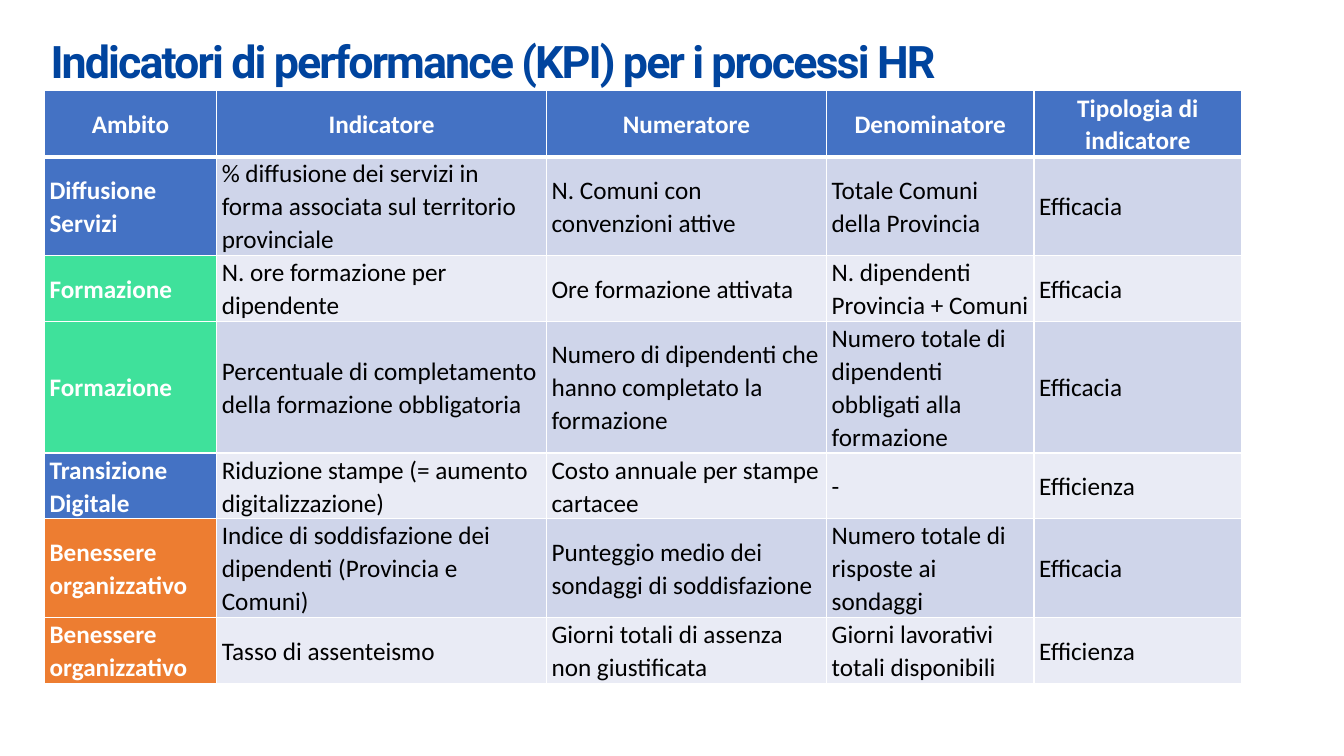
from dataclasses import dataclass
from typing import Any

from lxml.etree import SubElement
from pptx import Presentation
from pptx.dml.color import RGBColor as RGB
from pptx.enum.text import MSO_ANCHOR as Anchor, MSO_AUTO_SIZE as AutoSize, PP_ALIGN as Align
from pptx.oxml.ns import qn
from pptx.util import Cm, Pt

COLORS = {
    "title": "00449E",
    "blue": "4472C4",
    "green": "3FE19B",
    "orange": "ED7D31",
    "band_dark": "CFD5EA",
    "band_light": "E9EBF5",
    "white": "FFFFFF",
    "black": "000000",
}


@dataclass
class Kpi:
    area: str
    color: str
    height: float
    details: tuple[str, str, str, str]


HEADERS = ("Ambito", "Indicatore", "Numeratore", "Denominatore", "Tipologia di indicatore")
HEADER_HEIGHT = 1.4
COL_WIDTHS = (4.34, 8.31, 7.06, 5.23, 5.23)
KPIS = [
    Kpi("Diffusione Servizi", "blue", 2.11,
        ("% diffusione dei servizi in forma associata sul territorio provinciale",
         "N. Comuni con convenzioni attive", "Totale Comuni della Provincia", "Efficacia")),
    Kpi("Formazione", "green", 1.4,
        ("N. ore formazione per dipendente", "Ore formazione attivata",
         "N. dipendenti Provincia + Comuni", "Efficacia")),
    Kpi("Formazione", "green", 2.84,
        ("Percentuale di completamento della formazione obbligatoria",
         "Numero di dipendenti che hanno completato la formazione",
         "Numero totale di dipendenti obbligati alla formazione", "Efficacia")),
    Kpi("Transizione Digitale", "blue", 1.4,
        ("Riduzione stampe (= aumento digitalizzazione)",
         "Costo annuale per stampe cartacee", "-", "Efficienza")),
    Kpi("Benessere organizzativo", "orange", 2.11,
        ("Indice di soddisfazione dei dipendenti (Provincia e Comuni)",
         "Punteggio medio dei sondaggi di soddisfazione",
         "Numero totale di risposte ai sondaggi", "Efficacia")),
    Kpi("Benessere organizzativo", "orange", 1.4,
        ("Tasso di assenteismo", "Giorni totali di assenza non giustificata",
         "Giorni lavorativi totali disponibili", "Efficienza")),
]

TITLE_BOX = {"left": Cm(0.99), "top": Cm(0.51), "width": Cm(31.88), "height": Cm(2.03)}
TITLE_FRAME = {"vertical_anchor": Anchor.MIDDLE, "word_wrap": True, "auto_size": AutoSize.NONE}
TITLE_FONT = {"name": "Roboto", "size": Pt(32), "bold": True}
CELL_FORMAT = {"vertical_anchor": Anchor.MIDDLE, "margin_left": Cm(0.13),
               "margin_right": Cm(0.13), "margin_top": 0, "margin_bottom": 0}
CELL_PARAGRAPH = {"line_spacing": 1.07, "space_after": Pt(6)}
CELL_FONT = {"name": "Calibri", "size": Pt(18)}


def apply(target: Any, values: dict[str, Any]) -> None:
    for name, value in values.items():
        setattr(target, name, value)


def rgb(name: str) -> RGB:
    return RGB.from_string(COLORS[name])


def add_borders(cell: Any, top: float, bottom: float) -> None:
    """Draw white borders; must run before the cell is filled."""
    tc_pr = cell._tc.get_or_add_tcPr()
    for tag, points in {"lnL": 1, "lnR": 1, "lnT": top, "lnB": bottom}.items():
        ln = SubElement(tc_pr, qn(f"a:{tag}"), w=str(Pt(points)))
        SubElement(SubElement(ln, qn("a:solidFill")), qn("a:srgbClr"), val=COLORS["white"])


def fill_cell(cell: Any, text: str, fill: str, color: str, bold: bool, align: Align) -> None:
    cell.fill.solid()
    cell.fill.fore_color.rgb = rgb(fill)
    apply(cell, CELL_FORMAT)
    p = cell.text_frame.paragraphs[0]
    apply(p, CELL_PARAGRAPH | {"alignment": align})
    r = p.add_run()
    r.text = text
    apply(r.font, CELL_FONT | {"bold": bold})
    r.font.color.rgb = rgb(color)


def add_title(s: Any, text: str) -> None:
    sp = s.shapes.title
    apply(sp, TITLE_BOX)
    apply(sp.text_frame, TITLE_FRAME)
    p = sp.text_frame.paragraphs[0]
    p.alignment = Align.LEFT
    p._p.get_or_add_pPr().set("marL", str(Cm(0.03)))
    r = p.add_run()
    r.text = text
    apply(r.font, TITLE_FONT)
    r.font.color.rgb = rgb("title")
    r._r.get_or_add_rPr().set("spc", "-140")


def add_kpi_table(s: Any) -> None:
    heights = [HEADER_HEIGHT] + [kpi.height for kpi in KPIS]
    table = s.shapes.add_table(len(heights), len(COL_WIDTHS), Cm(1.12), Cm(2.29),
                               Cm(sum(COL_WIDTHS)), Cm(sum(heights))).table
    for col, width in zip(table.columns, COL_WIDTHS):
        col.width = Cm(width)
    for i, (row, height) in enumerate(zip(table.rows, heights)):
        row.height = Cm(height)
        for cell in row.cells:
            add_borders(cell, top=3 if i == 1 else 1, bottom=3 if i == 0 else 1)

    for j, text in enumerate(HEADERS):
        fill_cell(table.cell(0, j), text, "blue", "white", True, Align.CENTER)
    for i, kpi in enumerate(KPIS, 1):
        fill_cell(table.cell(i, 0), kpi.area, kpi.color, "white", True, Align.JUSTIFY)
        band = "band_dark" if i % 2 else "band_light"
        for j, text in enumerate(kpi.details, 1):
            fill_cell(table.cell(i, j), text, band, "black", False, Align.LEFT)


def main() -> None:
    prs = Presentation()
    prs.slide_width, prs.slide_height = Cm(33.87), Cm(19.05)
    s = prs.slides.add_slide(prs.slide_layouts[5])
    add_title(s, "Indicatori di performance (KPI) per i processi HR")
    add_kpi_table(s)
    prs.save("out.pptx")


if __name__ == "__main__":
    main()
